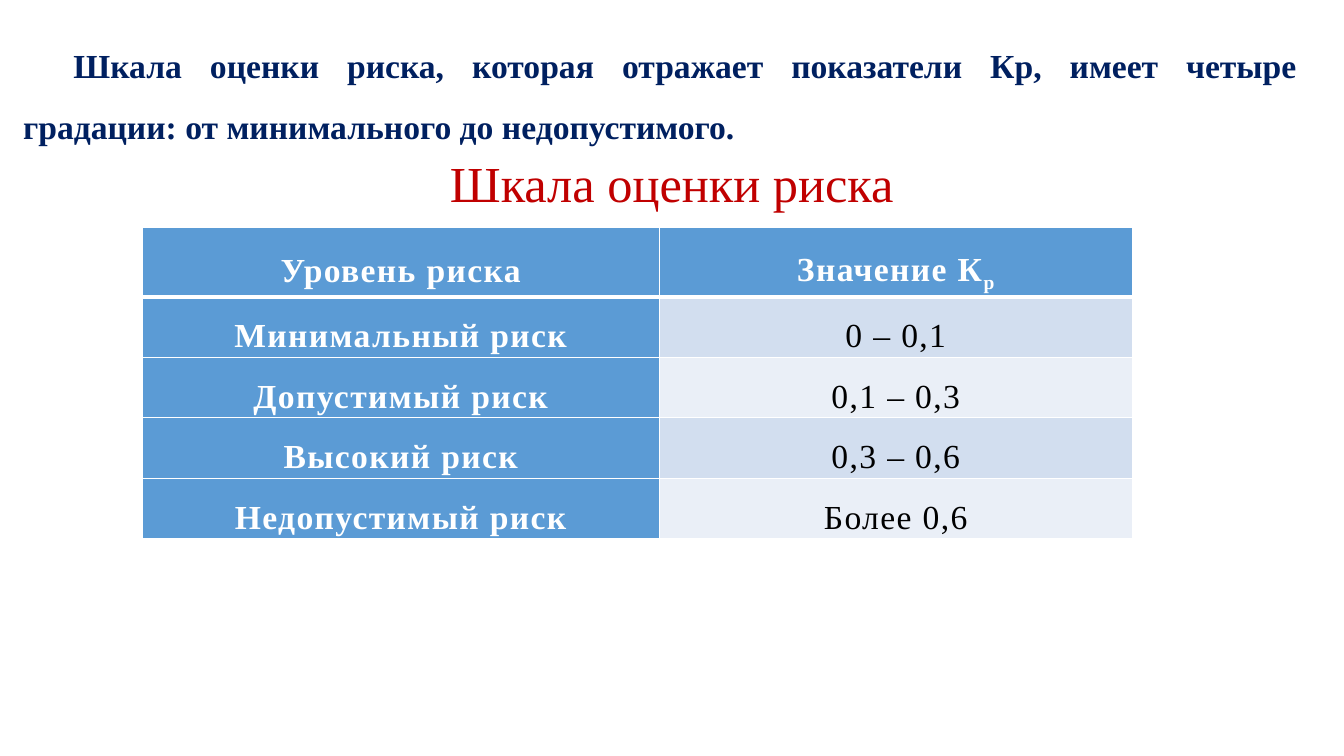
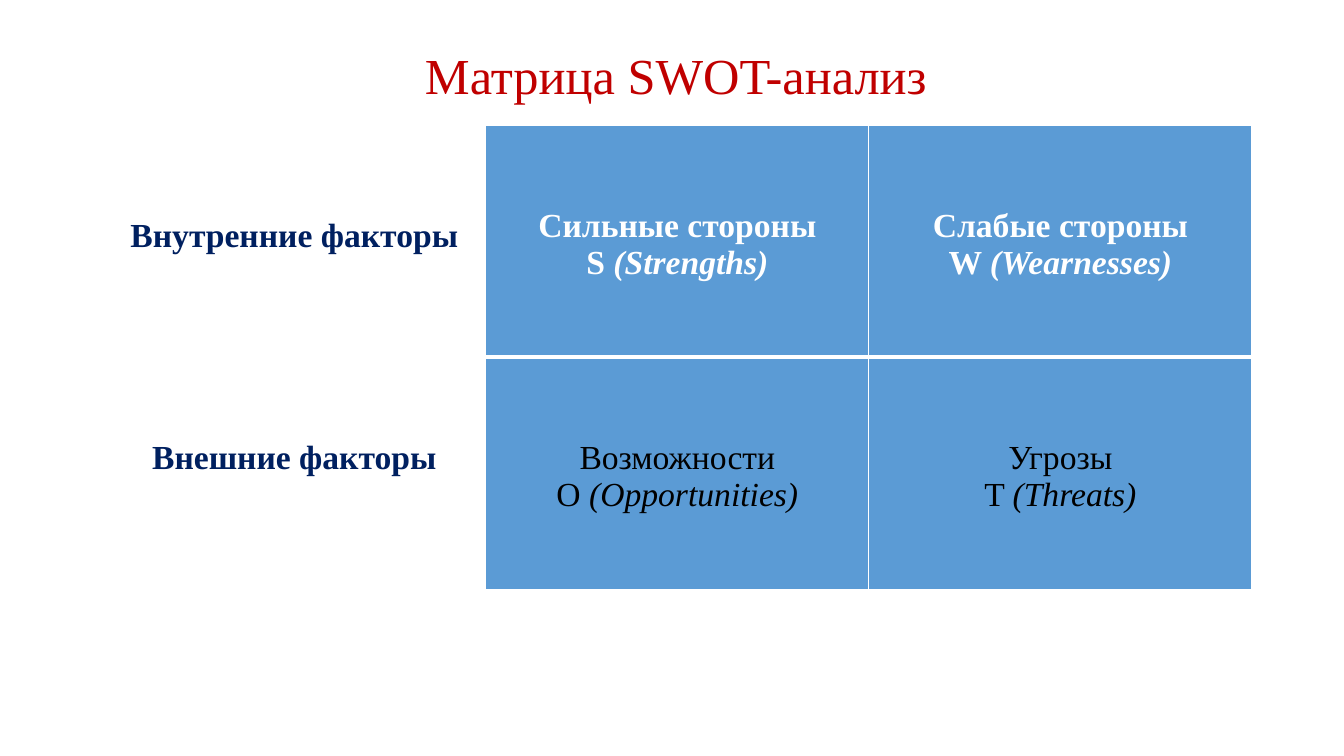
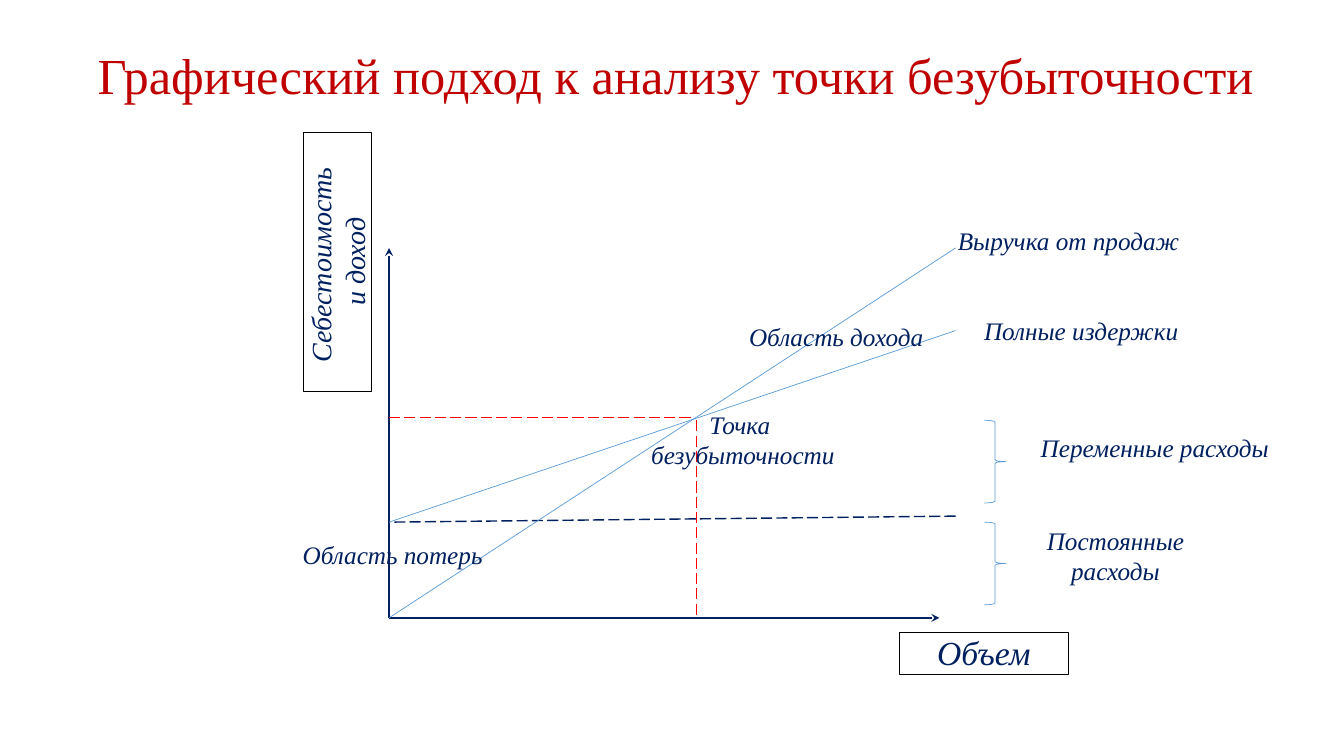
from dataclasses import dataclass
from typing import NamedTuple

from pptx import Presentation
from pptx.dml.color import RGBColor
from pptx.enum.dml import MSO_LINE_DASH_STYLE as Dash
from pptx.enum.shapes import MSO_CONNECTOR as Connector, MSO_SHAPE as Shape
from pptx.enum.text import MSO_ANCHOR as Anchor, MSO_AUTO_SIZE as AutoSize, PP_ALIGN as Align
from pptx.oxml.ns import qn
from pptx.oxml.xmlchemy import OxmlElement
from pptx.util import Inches, Pt

COLORS = {
    "white": "FFFFFF",
    "black": "000000",
    "navy": "002060",
    "title": "C00000",
    "blue": "5B9BD5",
    "band_dark": "D2DEEF",
    "band_light": "EAEFF7",
    "red": "FF0000",
}
FONT = "Times New Roman"
SLIDE_W, SLIDE_H = Inches(13.33), Inches(7.5)
TITLE_W, TITLE_H = 90.38, 10.93
TITLE_LEFT, TITLE_TOP = 5.1, 4.93


class Box(NamedTuple):
    left: float
    top: float
    width: float
    height: float


class Point(NamedTuple):
    x: float
    y: float


@dataclass(frozen=True)
class Style:
    size: float
    color: str
    bold: bool = False
    italic: bool = False
    tracking: int = 0
    line_spacing: float = 1.0
    align: Align = Align.CENTER


class Part(NamedTuple):
    text: str
    italic: bool = False
    baseline: int = 0


@dataclass(frozen=True)
class CellLook:
    style: Style
    fill: str | None
    bottom_border: float = 1
    anchor: Anchor = Anchor.TOP
    side_margin: float = 0.1
    top_margin: float = 0.05
    bottom_margin: float = 0.05


@dataclass(frozen=True)
class Label:
    text: str
    box: Box
    size: float = 18
    framed: bool = False
    inset: bool = True
    wrap: bool = False
    vertical: bool = False


@dataclass(frozen=True)
class Line:
    start: Point
    end: Point
    color: str
    width: float
    dashed: bool = False
    arrow: bool = False


TITLE = Style(36, "title", line_spacing=0.9)
INTRO = Style(24, "navy", bold=True, line_spacing=1.5, align=Align.JUSTIFY)
RISK_LEVEL = Style(24, "white", bold=True, tracking=100, line_spacing=1.5)
RISK_VALUE = Style(24, "black", tracking=100, line_spacing=1.5)
FACTOR = Style(24, "navy", bold=True)
INTERNAL = Style(24, "white", bold=True)
EXTERNAL = Style(24, "black")


def across(share: float) -> int:
    return round(SLIDE_W * share / 100)


def down(share: float) -> int:
    return round(SLIDE_H * share / 100)


def place(box: Box) -> tuple[int, int, int, int]:
    return across(box.left), down(box.top), across(box.width), down(box.height)


def rgb(name: str) -> RGBColor:
    return RGBColor.from_string(COLORS[name])


def write(paragraph, parts: list[Part], style: Style) -> None:
    paragraph.alignment = style.align
    paragraph.line_spacing = style.line_spacing
    for part in parts:
        for index, words in enumerate(part.text.split("\n")):
            if index:
                paragraph.add_line_break()
            run = paragraph.add_run()
            run.text = words
            font = run.font
            font.name, font.size = FONT, Pt(style.size)
            font.bold, font.italic = style.bold, style.italic or part.italic
            font.color.rgb = rgb(style.color)
            properties = run._r.get_or_add_rPr()
            if style.tracking:
                properties.set("spc", str(style.tracking))
            if part.baseline:
                properties.set("baseline", str(part.baseline))


def add_title(slide, text: str, left: float = TITLE_LEFT, top: float = TITLE_TOP) -> None:
    frame = slide.shapes.add_textbox(*place(Box(left, top, TITLE_W, TITLE_H))).text_frame
    frame.word_wrap = True
    frame.vertical_anchor = Anchor.MIDDLE
    write(frame.paragraphs[0], [Part(text)], TITLE)


def add_border(cell, side: str, width: float) -> None:
    edge = OxmlElement(f"a:{side}")
    edge.set("w", str(Pt(width)))
    fill = OxmlElement("a:solidFill")
    color = OxmlElement("a:srgbClr")
    color.set("val", COLORS["white"])
    fill.append(color)
    edge.append(fill)
    cell._tc.get_or_add_tcPr().append(edge)


def fill_cell(cell, parts: list[Part], look: CellLook, top_border: float) -> None:
    cell.margin_left = cell.margin_right = Inches(look.side_margin)
    cell.margin_top, cell.margin_bottom = Inches(look.top_margin), Inches(look.bottom_margin)
    cell.vertical_anchor = look.anchor
    for side, width in (("lnL", 1), ("lnR", 1), ("lnT", top_border), ("lnB", look.bottom_border)):
        add_border(cell, side, width)
    if look.fill:
        cell.fill.solid()
        cell.fill.fore_color.rgb = rgb(look.fill)
    else:
        cell.fill.background()
    write(cell.text_frame.paragraphs[0], parts, look.style)


def add_grid(slide, corner: Point, columns: list[float], row_height: float,
             rows: list[list[tuple[list[Part], CellLook]]]) -> None:
    area = Box(*corner, sum(columns), row_height * len(rows))
    table = slide.shapes.add_table(len(rows), len(columns), *place(area)).table
    table.first_row = table.horz_banding = False
    for column, width in zip(table.columns, columns):
        column.width = across(width)
    for r, row in enumerate(rows):
        table.rows[r].height = down(row_height)
        for c, (parts, look) in enumerate(row):
            top_border = rows[r - 1][c][1].bottom_border if r else 1
            fill_cell(table.cell(r, c), parts, look, top_border)


def add_label(slide, label: Label) -> None:
    if label.framed:
        holder = slide.shapes.add_shape(Shape.RECTANGLE, *place(label.box))
        holder.shadow.inherit = False
        holder.fill.background()
        holder.line.color.rgb = rgb("black")
        holder.line.width = Pt(0.75)
    else:
        holder = slide.shapes.add_textbox(*place(label.box))
    frame = holder.text_frame
    frame.word_wrap = label.wrap
    frame.vertical_anchor = Anchor.TOP
    if label.inset:
        frame.auto_size = AutoSize.SHAPE_TO_FIT_TEXT
    else:
        frame.margin_left = frame.margin_right = frame.margin_top = frame.margin_bottom = 0
    if label.vertical:
        holder.element.txBody.find(qn("a:bodyPr")).set("vert", "vert270")
    write(frame.paragraphs[0], [Part(label.text)], Style(label.size, "navy", italic=True))


def add_line(slide, line: Line) -> None:
    connector = slide.shapes.add_connector(
        Connector.STRAIGHT, across(line.start.x), down(line.start.y),
        across(line.end.x), down(line.end.y))
    connector.line.color.rgb = rgb(line.color)
    connector.line.width = Pt(line.width)
    if line.dashed:
        connector.line.dash_style = Dash.LONG_DASH
    if line.arrow:
        tip = OxmlElement("a:tailEnd")
        tip.set("type", "stealth")
        connector.line._get_or_add_ln().append(tip)
    connector.element.spPr.append(OxmlElement("a:effectLst"))


def add_brace(slide, box: Box) -> None:
    brace = slide.shapes.add_shape(Shape.RIGHT_BRACE, *place(box))
    brace.shadow.inherit = False
    brace.fill.background()
    brace.line.color.rgb = rgb("blue")
    brace.line.width = Pt(0.5)


def build_risk_scale(slide) -> None:
    intro = slide.shapes.add_textbox(*place(Box(0.98, 2.67, 96.23, 16.53))).text_frame
    intro.word_wrap = True
    intro.auto_size = AutoSize.SHAPE_TO_FIT_TEXT
    write(intro.paragraphs[0], [Part(
        "Шкала оценки риска, которая отражает показатели Кр, имеет четыре градации: "
        "от минимального до недопустимого.")], INTRO)
    intro.paragraphs[0]._p.get_or_add_pPr().set("indent", str(Inches(0.5)))
    add_title(slide, "Шкала оценки риска", 4.8, 19.2)

    def look(style: Style, fill: str, bottom_border: float = 1) -> CellLook:
        return CellLook(style, fill, bottom_border, Anchor.MIDDLE, 0.07, 0, 0)

    header = look(RISK_LEVEL, "blue", 3)
    rows = [[([Part("Уровень риска")], header),
             ([Part("Значение К"), Part("р", baseline=-25000)], header)]]
    levels = [("Минимальный риск", "0 – 0,1"), ("Допустимый риск", "0,1 – 0,3"),
              ("Высокий риск", "0,3 – 0,6"), ("Недопустимый риск", "Более 0,6")]
    for index, (level, value) in enumerate(levels):
        band = "band_light" if index % 2 else "band_dark"
        rows.append([([Part(level)], look(RISK_LEVEL, "blue")),
                     ([Part(value)], look(RISK_VALUE, band))])
    add_grid(slide, Point(10.58, 30.13), [38.48, 35.18], 7.39, rows)


def build_swot(slide) -> None:
    internal = CellLook(INTERNAL, "blue", 3, top_margin=0.82)
    external = CellLook(EXTERNAL, "blue", top_margin=0.82)
    rows = [
        [([Part("Внутренние факторы")], CellLook(FACTOR, None, 3, top_margin=0.92)),
         ([Part("Сильные стороны\nS "), Part("(Strengths)", True)], internal),
         ([Part("Слабые стороны\nW "), Part("(Wearnesses)", True)], internal)],
        [([Part("Внешние факторы")], CellLook(FACTOR, None, top_margin=0.82)),
         ([Part("Возможности\nO "), Part("(Opportunities)", True)], external),
         ([Part("Угрозы\nT "), Part("(Threats)", True)], external)],
    ]
    add_grid(slide, Point(7.65, 16.53), [28.5] * 3, 30.73, rows)
    add_title(slide, "Матрица SWOT-анализ")


def build_break_even(slide) -> None:
    add_title(slide, "Графический подход к анализу точки безубыточности")
    origin = Point(28.95, 81.73)
    fixed_costs = Point(origin.x, 69.07)
    break_even = Point(51.83, 55.6)
    sales_top, plot_right = 32.8, 71.1
    brace_left, brace_width, brace_height = 73.25, 1.58, 10.93

    labels = [
        Label("Постоянные расходы", Box(74.78, 69.47, 16.43, 4), inset=False, wrap=True),
        Label("Объем", Box(66.9, 83.6, 12.6, 5.6), 24, framed=True, inset=False, wrap=True),
        Label("Себестоимость \nи доход", Box(22.58, 17.47, 5.03, 34.27), 20,
              framed=True, inset=False, wrap=True, vertical=True),
        Label("Переменные расходы", Box(76.58, 56.53, 18.68, 5.33)),
        Label("Полные издержки", Box(72.38, 41.07, 16.13, 5.33)),
        Label("Выручка от продаж", Box(70.43, 29.2, 18.15, 5.33)),
        Label("Область дохода", Box(54.9, 41.87, 14.63, 5.33)),
        Label("Область потерь", Box(21.68, 70.67, 15.08, 5.33)),
        Label("Точка \nбезубыточности", Box(47.63, 53.47, 15.3, 9.47)),
    ]
    lines = [
        Line(origin, Point(origin.x, sales_top), "navy", 1.5, arrow=True),
        Line(origin, Point(69.9, origin.y), "navy", 1.5, arrow=True),
        Line(Point(plot_right, 68.27), fixed_costs, "navy", 1, dashed=True),
        Line(break_even, Point(break_even.x, origin.y), "red", 1, dashed=True),
        Line(origin, Point(plot_right, sales_top), "blue", 0.5),
        Line(fixed_costs, Point(plot_right, 43.73), "blue", 0.5),
        Line(Point(51.38, 55.2), Point(origin.x, 55.2), "red", 1, dashed=True),
    ]
    for line in lines:
        add_line(slide, line)
    for top in (fixed_costs.y, break_even.y):
        add_brace(slide, Box(brace_left, top, brace_width, brace_height))
    for label in labels:
        add_label(slide, label)


def main() -> None:
    deck = Presentation()
    deck.slide_width, deck.slide_height = SLIDE_W, SLIDE_H
    blank = deck.slide_layouts[6]
    for build in (build_risk_scale, build_swot, build_break_even):
        build(deck.slides.add_slide(blank))
    deck.save("out.pptx")


if __name__ == "__main__":
    main()
